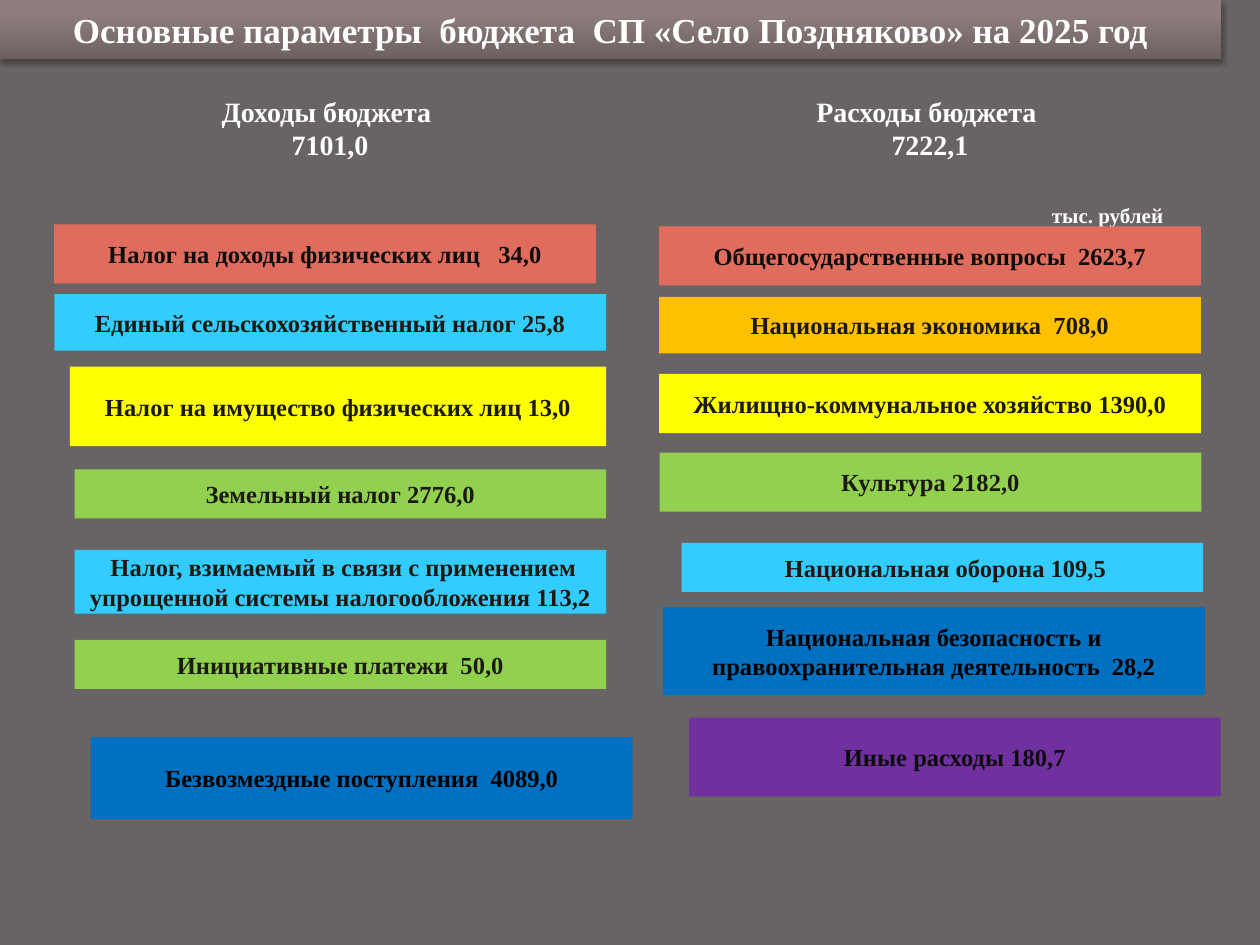
"""Builds a one-slide summary of a village budget: income and spending."""
from lxml import etree
from pptx import Presentation
from pptx.dml.color import RGBColor
from pptx.enum import shapes, text
from pptx.oxml import ns
from pptx.util import Pt

FONT = "Times New Roman"
HUES = {
    "back": "696464", "dark": "6E6162", "light": "8E7E7F", "white": "FFFFFF",
    "black": "000000", "ink": "0D0D0D", "brown": "1C1911", "red": "DF6C5D",
    "sky": "33CCFF", "yellow": "FFFF00", "green": "92D050", "blue": "0070C0",
    "orange": "FFC000", "purple": "7030A0",
}
INCOME = [
    ("Налог на доходы физических лиц   34,0", "red", "ink", 0, 0, 309.6, 33.8),
    ("Единый сельскохозяйственный налог 25,8", "sky", "brown", 0, 39.8, 315.4, 32.4),
    ("Налог на имущество физических лиц 13,0", "yellow", "brown", 9, 81.4, 306.4, 45.4),
    ("Земельный налог 2776,0", "green", "brown", 11.7, 140, 303.7, 28),
    (" Налог, взимаемый в связи с применением упрощенной системы налогообложения 113,2",
     "sky", "brown", 11.7, 186, 303.7, 36.5),
    ("Инициативные платежи  50,0", "green", "brown", 11.7, 237.5, 303.7, 28),
    ("Безвозмездные поступления  4089,0", "blue", "black", 21, 293, 309.6, 47),
]
SPENDING = [
    ("Общегосударственные вопросы  2623,7", "red", "ink", 0, 0, 309.6, 33.8),
    ("Национальная экономика  708,0", "orange", "brown", 0, 40.2, 309.6, 32.4),
    ("Жилищно-коммунальное хозяйство 1390,0", "yellow", "brown", 0, 84.3, 309.6, 33.8),
    ("Культура 2182,0", "green", "brown", 0.3, 129.2, 309.6, 33.8),
    (" Национальная оборона 109,5", "sky", "brown", 12.9, 180.9, 298, 28),
    ("Национальная безопасность и правоохранительная деятельность  28,2",
     "blue", "black", 2.3, 217.5, 309.6, 50.4),
    ("Иные расходы 180,7", "purple", "ink", 17.2, 280.7, 303.7, 45),
]


def hue(name):
    """Return the named colour."""
    return RGBColor.from_string(HUES[name])


def write(shape, words, size, tone):
    """Put bold centred text into a shape."""
    frame = shape.text_frame
    frame.word_wrap = True
    frame.text = words
    for para in frame.paragraphs:
        para.alignment = text.PP_ALIGN.CENTER
        for run in para.runs:
            font = run.font
            font.name, font.size, font.bold = FONT, Pt(size), True
            font.color.rgb = hue(tone)


def block(slide, box, words, size, tone):
    """Add a borderless rectangle with centred text."""
    shape = slide.shapes.add_shape(shapes.MSO_SHAPE.RECTANGLE, *map(Pt, box))
    shape.shadow.inherit = False
    shape.line.fill.background()
    shape.text_frame.vertical_anchor = text.MSO_ANCHOR.MIDDLE
    write(shape, words, size, tone)
    return shape


def label(slide, box, words, size):
    """Add a white text box."""
    shape = slide.shapes.add_textbox(*map(Pt, box))
    write(shape, words, size, "white")


def banner(slide, box, words):
    """Add the shaded title bar with its drop shadow."""
    bar = block(slide, box, words, 20, "white")
    bar.fill.gradient()
    bar.fill.gradient_angle = 90
    for stop, name, place in zip(bar.fill.gradient_stops, ("dark", "light"), (0, 0.8)):
        stop.color.rgb = hue(name)
        stop.position = place
    effects = bar._element.spPr.find(ns.qn("a:effectLst"))
    shade = etree.SubElement(effects, ns.qn("a:outerShdw"), blurRad=str(Pt(3.1)),
                             dist=str(Pt(1.8)), dir="5400000", rotWithShape="0")
    color = etree.SubElement(shade, ns.qn("a:srgbClr"), val=HUES["black"])
    etree.SubElement(color, ns.qn("a:alpha"), val="35000")


def column(slide, left, top, rows):
    """Add the coloured budget items of one column."""
    for words, fill, tone, x, y, width, height in rows:
        item = block(slide, (left + x, top + y, width, height), words, 14, tone)
        item.fill.solid()
        item.fill.fore_color.rgb = hue(fill)


def main():
    """Build and save the slide."""
    deck = Presentation()
    deck.slide_width, deck.slide_height = Pt(720), Pt(540)
    slide = deck.slides.add_slide(deck.slide_layouts[6])
    slide.background.fill.solid()
    slide.background.fill.fore_color.rgb = hue("back")
    banner(slide, (0, 0, 697.7, 33.8),
           "Основные параметры  бюджета  СП «Село Поздняково» на 2025 год")
    label(slide, (33.8, 50.4, 309.6, 46), "Доходы бюджета \n7101,0", 16)
    label(slide, (376.6, 50.4, 309.6, 46), "Расходы бюджета \n7222,1", 16)
    label(slide, (579.6, 112.3, 106.6, 21.6), "тыс. рублей", 12)
    column(slide, 31, 128.2, INCOME)
    column(slide, 376.6, 129.4, SPENDING)
    deck.save("out.pptx")


if __name__ == "__main__":
    main()
